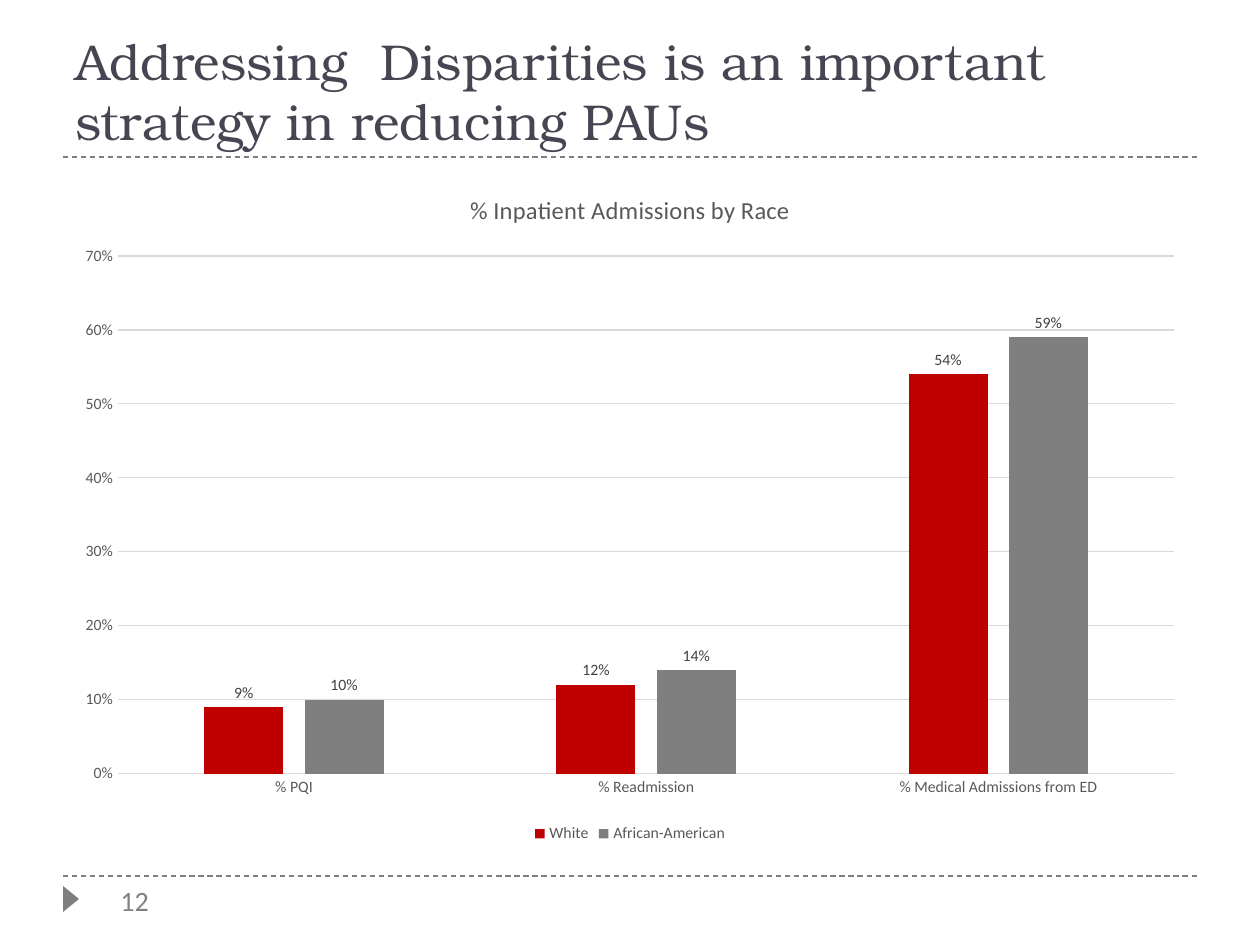
from lxml import etree
from pptx import Presentation
from pptx import util as u
from pptx.chart.data import CategoryChartData
from pptx.dml.color import RGBColor
from pptx.enum import chart as ch, dml, shapes, text
from pptx.oxml.ns import qn

HEADLINE = "Addressing  Disparities is an important strategy in reducing PAUs"
PAGE_NUMBER = "12"
CHART_TITLE = "% Inpatient Admissions by Race"
MEASURES = ["% PQI", "% Readmission", "% Medical Admissions from ED"]
RACES = [
    ("White", [0.09, 0.12, 0.54], "C00000"),
    ("African-American", [0.10, 0.14, 0.59], "7F7F7F"),
]
RULE_HEIGHTS = [157, 876]
MARGIN, WIDTH = 63, 1134
GREY, GRID, LABEL = "7F7F7F", "D9D9D9", "595959"


def px(n):
    return u.Emu(round(n * 914400 / 126))


def box(*sides):
    return [px(n) for n in sides]


def rgb(value):
    return RGBColor.from_string(value)


def style(font, size, color, face="Calibri"):
    font.size = u.Pt(size)
    font.name = face
    font.bold = False
    font.color.rgb = rgb(color)


def stroke(line, color):
    line.color.rgb = rgb(color)
    line.width = u.Pt(0.75)


def add_rule(slide, y):
    rule = slide.shapes.add_connector(
        shapes.MSO_CONNECTOR.STRAIGHT, *box(MARGIN, y, MARGIN + WIDTH, y))
    stroke(rule.line, GREY)
    rule.line.dash_style = dml.MSO_LINE.DASH
    etree.SubElement(rule._element.spPr, qn("a:effectLst"))


def add_footer(slide):
    marker = slide.shapes.add_shape(
        shapes.MSO_SHAPE.ISOSCELES_TRIANGLE, *box(58, 891, 26, 16))
    marker.rotation = 90
    marker.shadow.inherit = False
    marker.fill.solid()
    marker.fill.fore_color.rgb = rgb(GREY)
    marker.line.fill.background()

    number = slide.shapes.add_textbox(*box(108, 877, 59, 47)).text_frame
    number.word_wrap = False
    run = number.paragraphs[0].add_run()
    run.text = PAGE_NUMBER
    style(run.font, 16, "808080")


def add_headline(slide):
    headline = slide.shapes.title
    headline.left, headline.top, headline.width, headline.height = box(
        MARGIN, 21, WIDTH, 136)
    frame = headline.text_frame
    frame.word_wrap = True
    frame.auto_size = text.MSO_AUTO_SIZE.NONE
    frame.vertical_anchor = text.MSO_ANCHOR.BOTTOM
    line = frame.paragraphs[0]
    line.alignment = text.PP_ALIGN.LEFT
    run = line.add_run()
    run.text = HEADLINE
    style(run.font, 28.8, "464653", "TeX Gyre Bonum")


def add_admissions(slide):
    data = CategoryChartData(number_format="0%")
    data.categories = MEASURES
    for race, shares, _ in RACES:
        data.add_series(race, shares)
    chart = slide.shapes.add_chart(
        ch.XL_CHART_TYPE.COLUMN_CLUSTERED, *box(MARGIN, 168, WIDTH, 680), data).chart
    style(chart.font, 10, "000000")

    chart.has_title = True
    run = chart.chart_title.text_frame.paragraphs[0].add_run()
    run.text = CHART_TITLE
    style(run.font, 14, LABEL)
    chart.chart_title.include_in_layout = False

    chart.has_legend = True
    chart.legend.position = ch.XL_LEGEND_POSITION.BOTTOM
    chart.legend.include_in_layout = False
    style(chart.legend.font, 9, LABEL)

    for axis in (chart.category_axis, chart.value_axis):
        axis.major_tick_mark = axis.minor_tick_mark = ch.XL_TICK_MARK.NONE
        style(axis.tick_labels.font, 9, LABEL)
    stroke(chart.category_axis.format.line, GRID)
    shares_axis = chart.value_axis
    shares_axis.minimum_scale, shares_axis.maximum_scale = 0, 0.7
    shares_axis.major_unit = 0.1
    shares_axis.format.line.fill.background()
    stroke(shares_axis.major_gridlines.format.line, GRID)
    shares_axis.tick_labels.number_format = "0%"
    shares_axis.tick_labels.number_format_is_linked = False

    plot = chart.plots[0]
    plot.vary_by_categories = False
    plot.gap_width, plot.overlap = 219, -27
    for bars, (_, _, color) in zip(plot.series, RACES):
        bars.format.fill.solid()
        bars.format.fill.fore_color.rgb = rgb(color)
        labels = bars.data_labels
        labels.show_value = True
        labels.number_format = "0%"
        labels.number_format_is_linked = False
        labels.position = ch.XL_LABEL_POSITION.OUTSIDE_END
        style(labels.font, 9, "404040")


def main():
    deck = Presentation()
    deck.slide_width, deck.slide_height = box(1260, 945)
    slide = deck.slides.add_slide(deck.slide_layouts[5])
    for y in RULE_HEIGHTS:
        add_rule(slide, y)
    add_footer(slide)
    add_headline(slide)
    add_admissions(slide)
    deck.save("out.pptx")


if __name__ == "__main__":
    main()
